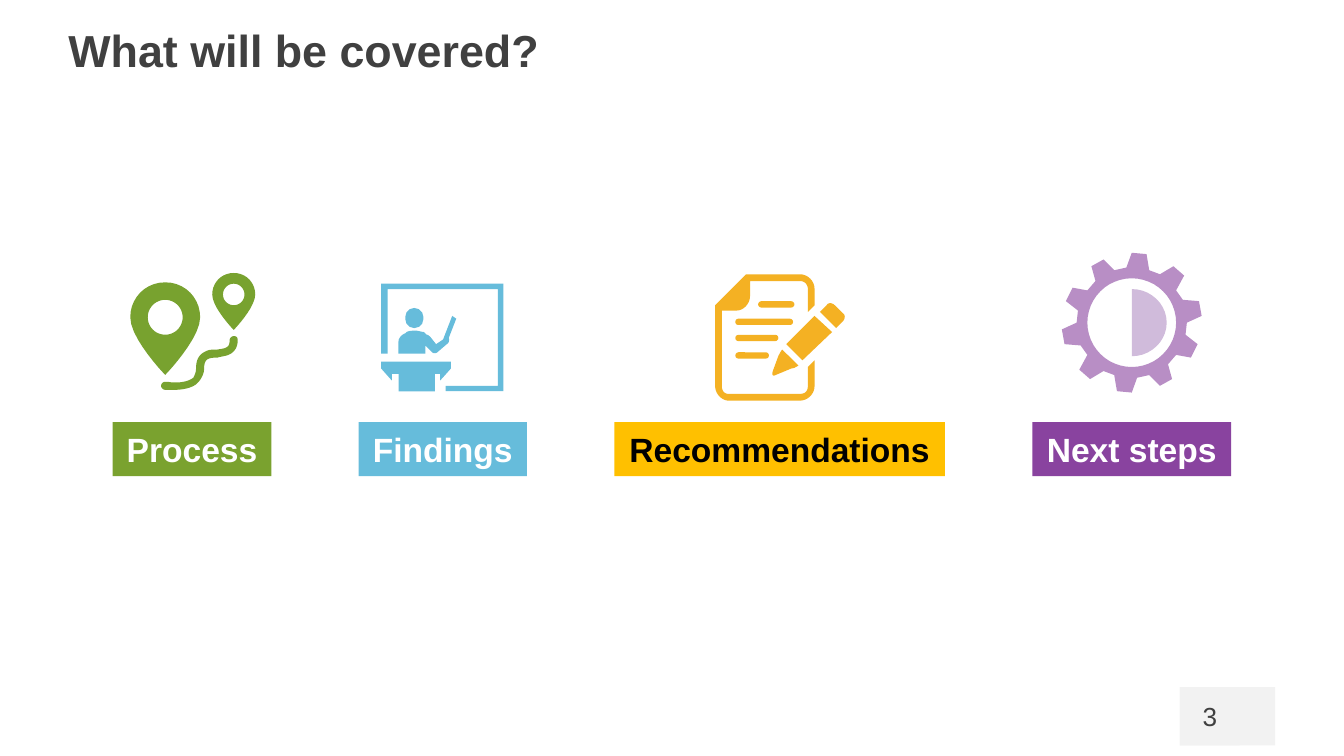
from dataclasses import dataclass
from math import cos, pi, sin

from pptx import Presentation
from pptx.dml.color import RGBColor
from pptx.enum import shapes, text
from pptx.util import Cm, Pt


@dataclass(frozen=True)
class Theme:
    """Colours and type sizes of the deck."""
    font: str = "Arial"
    ink: str = "404040"
    black: str = "000000"
    white: str = "FFFFFF"
    panel: str = "F2F2F2"
    green: str = "7AA22F"
    leaf: str = "78A22F"
    blue: str = "66BCDB"
    yellow: str = "FFC000"
    amber: str = "F4B123"
    purple: str = "89439F"
    lilac: str = "B88EC5"
    mauve: str = "D0BBDB"
    title_size: int = 24
    label_size: int = 18
    number_size: int = 14


@dataclass(frozen=True)
class Box:
    """A rectangle on the page; icons use a grid of 100 units across its width."""
    left: int
    top: int
    width: int
    height: int

    def at(self, x, y):
        """Turn grid units into a position on the page."""
        return round(self.left + self.width * x / 100), round(self.top + self.height * y / 100)

    def inner(self, x, y, width, height):
        """Give the inner box that covers the given grid units."""
        left, top = self.at(x, y)
        right, bottom = self.at(x + width, y + height)
        return Box(left, top, right - left, bottom - top)


THEME = Theme()
RECT = shapes.MSO_SHAPE.RECTANGLE
PILL = shapes.MSO_SHAPE.ROUNDED_RECTANGLE


def paint(shape, colour):
    """Fill a shape flat, without line or shadow."""
    shape.shadow.inherit = False
    shape.fill.solid()
    shape.fill.fore_color.rgb = RGBColor.from_string(colour)
    shape.line.fill.background()
    return shape


def add_block(parent, kind, box, colour):
    """Add a flat preset shape."""
    shape = parent.shapes.add_shape(kind, box.left, box.top, box.width, box.height)
    if kind == PILL:
        shape.adjustments[0] = 0.5
    return paint(shape, colour)


def write(shape, words, size, colour, bold, align, anchor):
    """Write one unwrapped line of text in a shape."""
    frame = shape.text_frame
    frame.word_wrap = False
    frame.vertical_anchor = anchor
    para = frame.paragraphs[0]
    para.alignment = align
    span = para.add_run()
    span.text = words
    span.font.name = THEME.font
    span.font.size = Pt(size)
    span.font.bold = bold
    span.font.color.rgb = RGBColor.from_string(colour)


def flatten(steps):
    """Turn points and six-number cubic curves into a list of points."""
    points = []
    for step in steps:
        if len(step) == 2:
            points.append(step)
            continue
        knots = (points[-1], step[:2], step[2:4], step[4:])
        for t in (n / 10 for n in range(1, 11)):
            weights = ((1 - t) ** 3, 3 * t * (1 - t) ** 2, 3 * t * t * (1 - t), t ** 3)
            points.append(tuple(sum(w * k[axis] for w, k in zip(weights, knots)) for axis in (0, 1)))
    return points


def circle(x, y, radius):
    """List the points of a circle."""
    angles = [2 * pi * n / 48 for n in range(48)]
    return [(x + radius * cos(a), y + radius * sin(a)) for a in angles]


def add_outline(parent, box, colour, *contours):
    """Draw closed contours as one shape; inner contours become holes."""
    builder = None
    for contour in contours:
        start, *rest = [box.at(*point) for point in flatten(contour)]
        if builder is None:
            builder = parent.shapes.build_freeform(*start, scale=1.0)
        else:
            builder.move_to(*start)
        builder.add_line_segments(rest, close=True)
    paint(builder.convert_to_shape(), colour)


def add_pin(parent, box, x, y, r):
    """Draw a map pin with its eye at the given point."""
    drop = [(x, y - r), (x - .58 * r, y - r, x - r, y - .54 * r, x - r, y),
            (x - r, y + .62 * r, x, y + 1.65 * r, x, y + 1.65 * r),
            (x, y + 1.65 * r, x + r, y + .62 * r, x + r, y),
            (x + r, y - .54 * r, x + .58 * r, y - r, x, y - r)]
    add_outline(parent, box, THEME.leaf, drop, circle(x, y, r / 2))


def draw_route(parent, box):
    """Draw two map pins joined by a winding trail."""
    add_pin(parent, box, 30, 46, 26)
    add_pin(parent, box, 81, 29, 16)
    add_outline(parent, box, THEME.leaf, [
        (37, 100), (30, 100), (29, 100, 27, 99, 27, 97), (27, 95, 29, 94, 30, 94), (32, 94),
        (36, 95, 46, 95, 51, 91), (52, 89, 53, 87, 53, 84), (53, 78, 55, 74, 59, 72),
        (62, 70, 65, 70, 69, 70), (75, 69, 78, 69, 78, 63), (78, 61, 80, 60, 81, 60),
        (83, 60, 84, 61, 84, 63), (84, 68, 82, 71, 79, 73), (76, 75, 72, 75, 69, 76),
        (62, 76, 59, 77, 59, 84), (59, 88, 57, 92, 54, 95), (50, 99, 42, 100, 37, 100)])


def draw_speaker(parent, box):
    """Draw a speaker at a lectern in front of a screen."""
    body = [(37, 73), (17, 73), (17, 64), (17, 62, 19, 59, 22, 58), (23, 57),
            (25, 56, 27, 56, 30, 56), (32, 56, 34, 57, 36, 57), (38, 59),
            (39, 59, 40, 60, 41, 61), (45, 66), (54, 60), (55, 62, 55, 65, 53, 66),
            (46, 72), (45, 73, 43, 73, 42, 72), (37, 67), (37, 68, 37, 70, 37, 73)]
    screen = [(52, 101), (95, 101), (95, 21), (4, 21), (4, 73), (9, 73),
              (9, 25), (91, 25), (91, 97), (52, 97)]
    lectern = [(56, 79), (56, 84), (48, 93), (48, 88), (44, 88), (44, 101),
               (17, 101), (17, 88), (12, 88), (12, 93), (4, 84), (4, 79)]
    pointer = [(53, 65), (60, 47), (57, 45), (50, 63)]
    add_block(parent, PILL, box.inner(22, 39, 13.5, 15), THEME.blue)
    for contour in (body, screen, lectern, pointer):
        add_outline(parent, box, THEME.blue, contour)


def draw_document(parent, box):
    """Draw a written sheet with a pencil."""
    sheet = [(71, 83), (71, 97), (71, 101, 69, 103, 65, 103), (12, 103), (9, 103, 7, 101, 7, 97),
             (7, 41), (18, 41), (23, 41, 28, 36, 28, 30), (28, 19), (65, 19),
             (69, 19, 71, 22, 71, 25), (71, 42), (76, 37), (76, 25), (76, 19, 71, 14, 65, 14),
             (25, 14), (2, 37), (2, 97), (2, 103, 7, 108, 12, 108), (65, 108),
             (71, 108, 76, 103, 76, 97), (76, 78)]
    eraser = [(92, 54), (97, 49), (99, 47, 99, 44, 97, 43), (91, 37), (89, 35, 86, 35, 85, 37), (80, 42)]
    shaft = [(76, 45), (55, 66), (67, 78), (89, 57)]
    tip = [(52, 70), (51, 71, 50, 73, 49, 75), (45, 86), (44, 89, 45, 90, 47, 89),
           (59, 84), (61, 84, 62, 83, 64, 82)]
    for x, y, width in ((34, 34, 27), (17, 47, 43), (17, 59, 32), (17, 72, 25)):
        add_block(parent, PILL, box.inner(x, y, width, 4.7), THEME.amber)
    for contour in (sheet, eraser, shaft, tip):
        add_outline(parent, box, THEME.amber, contour)


def draw_gear(parent, box):
    """Draw a gear, its teeth repeated by a half turn, around a half disc."""
    half = [(91, 50), (102, 45), (100, 34), (88, 33), (83, 26), (89, 15), (81, 8), (71, 14),
            (63, 11), (61, -1), (50, -2), (46, 9), (37, 11), (29, 3), (20, 8), (23, 19),
            (17, 26), (6, 24), (1, 34), (10, 41)]
    teeth = half + [(100 - x, 100 - y) for x, y in half]
    add_outline(parent, box, THEME.lilac, teeth, circle(50, 50, 33))
    add_outline(parent, box, THEME.mauve, [
        (50, 25), (50, 75), (64, 75, 76, 64, 76, 50), (76, 36, 64, 25, 50, 25)])


def add_topic(page, box, words, fill, ink, draw):
    """Place a label in the box and its icon centred above it."""
    group = page.shapes.add_group_shape()
    label = add_block(group, RECT, box, fill)
    write(label, words, THEME.label_size, ink, True, text.PP_ALIGN.CENTER, text.MSO_ANCHOR.TOP)
    side = Cm(2.54)
    draw(group, Box(box.left + (box.width - side) // 2, box.top - Cm(3.15), side, side))


def add_topics(page, box):
    """Set the topics in a row with equal gaps."""
    topics = (("Process", 3, THEME.green, THEME.white, draw_route),
              ("Findings", 3.18, THEME.blue, THEME.white, draw_speaker),
              ("Recommendations", 6.25, THEME.yellow, THEME.black, draw_document),
              ("Next steps", 3.76, THEME.purple, THEME.white, draw_gear))
    gap = (box.width - sum(Cm(topic[1]) for topic in topics)) // (len(topics) - 1)
    left = box.left
    for words, width, fill, ink, draw in topics:
        add_topic(page, Box(left, box.top, Cm(width), box.height), words, fill, ink, draw)
        left += Cm(width) + gap


def add_title(page, box, words):
    """Move and format the title placeholder."""
    title = page.shapes.title
    title.left, title.top, title.width, title.height = box.left, box.top, box.width, box.height
    write(title, words, THEME.title_size, THEME.ink, True, text.PP_ALIGN.LEFT, text.MSO_ANCHOR.MIDDLE)


def add_page_number(page, box, number):
    """Place the page number at the left of its panel."""
    add_block(page, RECT, box, THEME.panel)
    tab = add_block(page, RECT, Box(box.left, box.top, Cm(1.13), box.height), THEME.panel)
    write(tab, number, THEME.number_size, THEME.ink, False, text.PP_ALIGN.CENTER, text.MSO_ANCHOR.MIDDLE)


def main():
    """Build and save the deck."""
    deck = Presentation()
    deck.slide_width, deck.slide_height = Cm(25.4), Cm(14.29)
    page = deck.slides.add_slide(deck.slide_layouts[5])
    add_title(page, Box(Cm(1.04), Cm(0.3), Cm(9.47), Cm(1.27)), "What will be covered?")
    add_topics(page, Box(Cm(2.13), Cm(7.98), Cm(21.14), Cm(1.02)))
    add_page_number(page, Box(Cm(22.3), Cm(12.99), Cm(1.8), Cm(1.1)), "3")
    deck.save("out.pptx")


if __name__ == "__main__":
    main()
